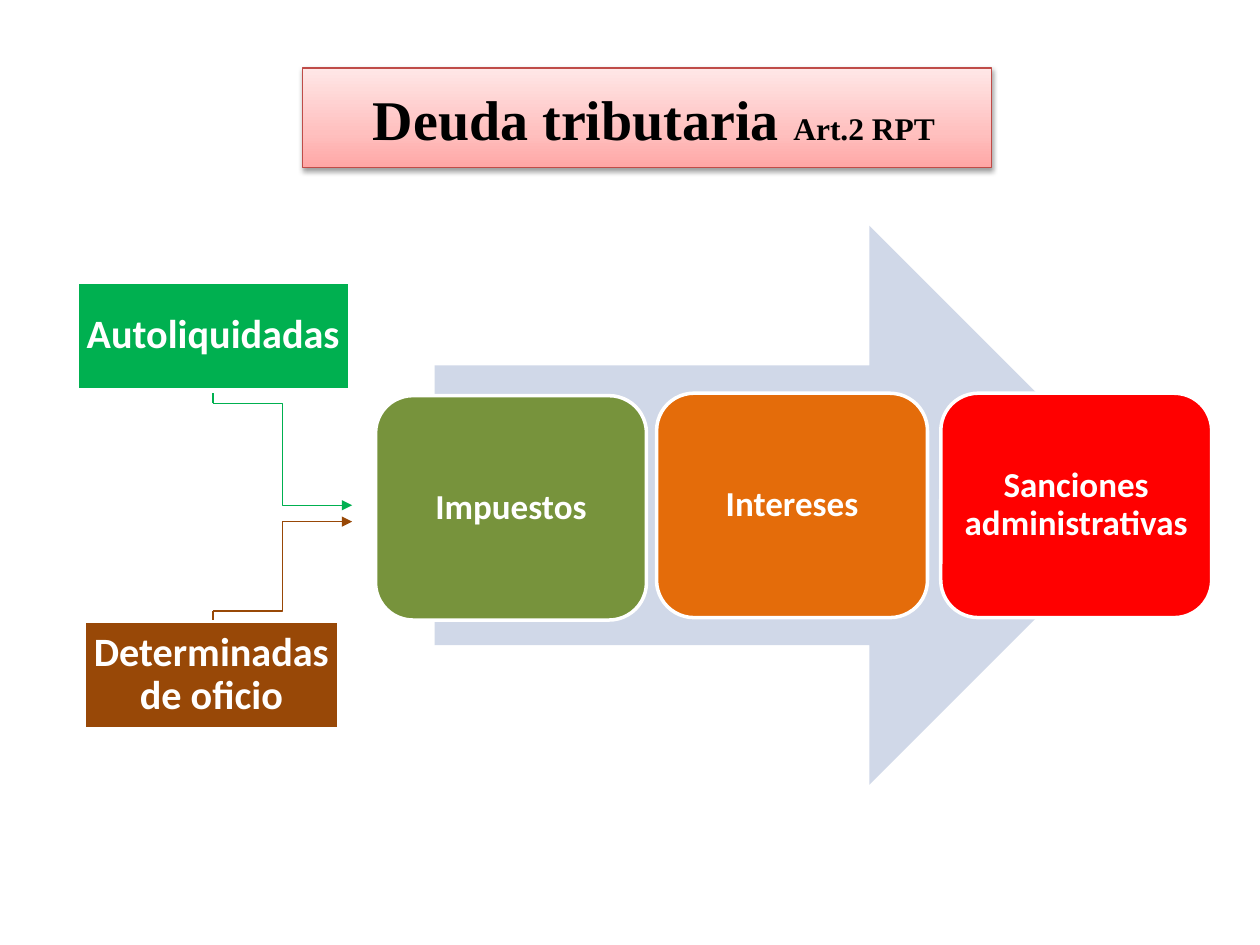
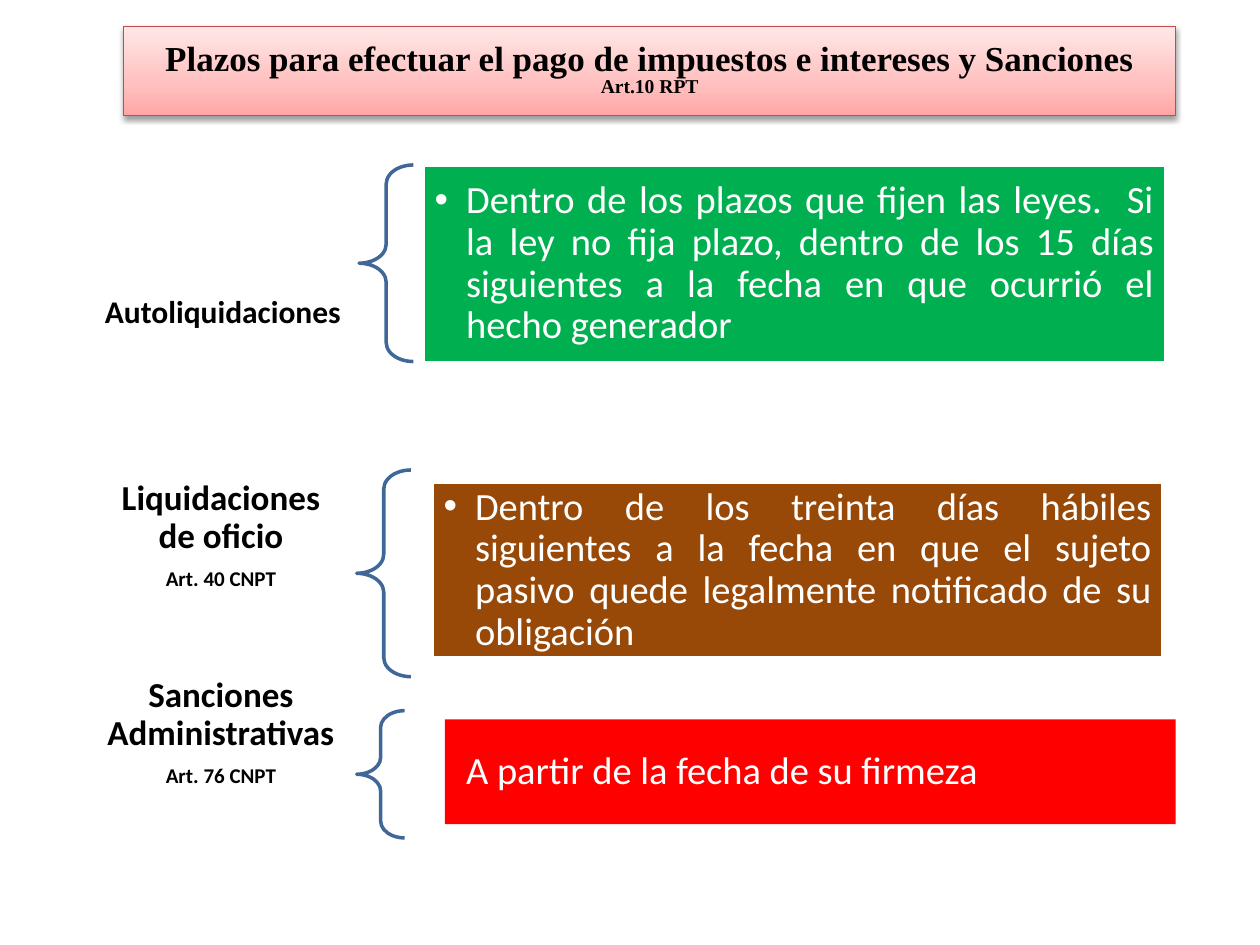
from collections import namedtuple
from dataclasses import dataclass

import lxml.etree
import pptx
import pptx.dml.color
import pptx.enum.dml
import pptx.enum.shapes
import pptx.enum.text
import pptx.oxml.ns
import pptx.util

Pt = pptx.util.Pt
qn = pptx.oxml.ns.qn
Preset = pptx.enum.shapes.MSO_SHAPE
Connector = pptx.enum.shapes.MSO_CONNECTOR
Align = pptx.enum.text.PP_ALIGN

Box = namedtuple("Box", "left top width height")


@dataclass(frozen=True)
class Theme:
    title_font: str = "Times New Roman"
    body_font: str = "Calibri"
    white: str = "FFFFFF"
    black: str = "000000"
    green: str = "00B050"
    brown: str = "984807"
    red: str = "FF0000"
    olive: str = "77933C"
    orange: str = "E46C0A"
    pale_blue: str = "D0D8E8"
    brace: str = "3F6797"
    title_line: str = "BF4C48"
    title_stops: tuple = ((0, "FFA6A5"), (35, "FFC0BF"), (100, "FFE7E7"))
    title_size: float = 32
    title_note_size: float = 18
    long_title_size: float = 20
    long_title_note_size: float = 11.2
    source_size: float = 23
    panel_size: float = 22
    label_size: float = 20
    small_label_size: float = 18
    note_size: float = 12
    outline: float = 2
    hairline: float = 0.75
    line_spacing: float = 0.9


THEME = Theme()


def rgb(color):
    return pptx.dml.color.RGBColor.from_string(color)


def inside(box, left, top, width, height):
    """Turn offsets within a box into a box on the page."""
    return Box(box.left + left, box.top + top, width, height)


def add_node(parent, tag, **attributes):
    values = {name: str(value) for name, value in attributes.items()}
    return lxml.etree.SubElement(parent, qn(tag), values)


def add_preset(page, preset, box, fill=None, line=None, weight=THEME.outline):
    shape = page.shapes.add_shape(preset, *(Pt(length) for length in box))
    shape.shadow.inherit = False
    if fill:
        shape.fill.solid()
        shape.fill.fore_color.rgb = rgb(fill)
    else:
        shape.fill.background()
    if line:
        shape.line.color.rgb = rgb(line)
        shape.line.width = Pt(weight)
    else:
        shape.line.fill.background()
    return shape


def style_run(span, size, color, bold=True, font=THEME.body_font):
    span.font.name = font
    span.font.size = Pt(size)
    span.font.bold = bold
    span.font.color.rgb = rgb(color)


def set_margins(frame, side, end):
    frame.word_wrap = True
    frame.vertical_anchor = pptx.enum.text.MSO_ANCHOR.MIDDLE
    frame.margin_left = frame.margin_right = Pt(side)
    frame.margin_top = frame.margin_bottom = Pt(end)


def write(shape, lines, color, margins, align=Align.CENTER, bold=True):
    """Fill a shape with (text, size) lines in the body font."""
    frame = shape.text_frame
    set_margins(frame, *margins)
    frame.text = "\n".join(text for text, _ in lines)
    for para, (_, size) in zip(frame.paragraphs, lines):
        para.alignment = align
        para.line_spacing = THEME.line_spacing
        para.space_after = Pt(round(size * 0.35))
        style_run(para.runs[0], size, color, bold)


def add_bullet(para, indent):
    properties = para._p.get_or_add_pPr()
    properties.set("marL", str(Pt(indent)))
    properties.set("indent", str(-Pt(indent)))
    add_node(properties, "a:buFont", typeface="Arial")
    add_node(properties, "a:buChar", char="•")


def add_line(page, kind, start, end, color, arrow=False):
    line = page.shapes.add_connector(kind, *(Pt(value) for value in start + end))
    line.line.color.rgb = rgb(color)
    line.line.width = Pt(THEME.hairline)
    if arrow:
        add_node(line.line._get_or_add_ln(), "a:tailEnd", type="triangle")
    add_node(line._element.spPr, "a:effectLst")


def title_band(page, box):
    """Pink gradient band with a soft shadow; returns its text frame."""
    band = add_preset(page, Preset.RECTANGLE, box, THEME.white,
                      THEME.title_line, THEME.hairline)
    # Three-stop gradient that rises from the lower edge
    band.fill.gradient()
    band.fill.gradient_angle = 90
    stops = band._element.spPr.find(qn("a:gradFill")).find(qn("a:gsLst"))
    for stop in list(stops):
        stops.remove(stop)
    for position, color in THEME.title_stops:
        stop = add_node(stops, "a:gs", pos=position * 1000)
        add_node(stop, "a:srgbClr", val=color)
    # Soft shadow below
    effects = band._element.spPr.find(qn("a:effectLst"))
    shadow = add_node(effects, "a:outerShdw", blurRad=Pt(3.1), dist=Pt(1.6),
                      dir=5400000, rotWithShape=0)
    shadow_color = add_node(shadow, "a:srgbClr", val=THEME.black)
    add_node(shadow_color, "a:alpha", val=38000)
    set_margins(band.text_frame, 7.2, 3.6)
    return band.text_frame


def write_title(para, parts):
    para.alignment = Align.CENTER
    for text, size in parts:
        span = para.add_run()
        span.text = text
        style_run(span, size, THEME.black, font=THEME.title_font)


def debt_arrow(page, box):
    """Wide arrow behind the three components of the debt."""
    add_preset(page, Preset.RIGHT_ARROW, inside(box, 33.8, 0, 408.2, box.height),
               THEME.pale_blue)
    components = (
        ("Impuestos", THEME.olive, 0, 97.2),
        ("Intereses", THEME.orange, 160.6, 95.8),
        ("Sanciones administrativas", THEME.red, 323, 95.8),
    )
    for name, color, left, top in components:
        card = add_preset(page, Preset.ROUNDED_RECTANGLE,
                          inside(box, left, top, 154.8, 128.2), color, THEME.white)
        write(card, [(name, THEME.label_size)], THEME.white, (5.8, 5.8))


def tax_sources(page, box):
    """Two kinds of tax, each joined by an elbow arrow to the first component."""
    stem_x = box.left + 77.8
    sources = (
        ("Autoliquidadas", THEME.green, 0, 0, 156.2, 63.4, 69.1, 127.4),
        ("Determinadas de oficio", THEME.brown, 4.3, 193.7, 145.4, 193, 187.9, 136.8),
    )
    for name, color, left, top, width, edge, bend, tip in sources:
        card = add_preset(page, Preset.RECTANGLE, inside(box, left, top, width, 61.2),
                          color, THEME.white)
        write(card, [(name, THEME.source_size)], THEME.white, (4.3, 4.3))
        corner = (stem_x, box.top + bend)
        add_line(page, Connector.ELBOW, corner,
                 (box.left + box.width, box.top + tip), color, arrow=True)
        add_line(page, Connector.STRAIGHT, corner, (stem_x, box.top + edge), color)


def term_label(page, box, lines, align):
    label = page.shapes.add_textbox(*(Pt(length) for length in box))
    write(label, lines, THEME.black, (9.5, 4), align)


def term_brace(page, box):
    brace = add_preset(page, Preset.LEFT_BRACE, box, line=THEME.brace)
    brace.adjustments[0] = 0.35
    brace.adjustments[1] = 0.5


def term_panel(page, box, text, color, bullet):
    panel = add_preset(page, Preset.RECTANGLE, box, color,
                       THEME.white if bullet else None)
    write(panel, [(text, THEME.panel_size)], THEME.white,
          (6.5, 6.5) if bullet else (12.2, 4.3), Align.JUSTIFY, bold=False)
    if bullet:
        add_bullet(panel.text_frame.paragraphs[0], 18)


def term_row(page, box, lines, align, brace, panel, text, color, bullet=True):
    """One payment term: label, brace and coloured panel."""
    term_label(page, Box(box.left, box.top, 156.2, box.height), lines, align)
    term_brace(page, inside(box, *brace))
    term_panel(page, inside(box, *panel), text, color, bullet)


def debt_slide(page):
    frame = title_band(page, Box(172.8, 38.9, 393.8, 56.9))
    write_title(frame.paragraphs[0], [(" Deuda tributaria ", THEME.title_size),
                                      ("Art.2 RPT", THEME.title_note_size)])
    debt_arrow(page, Box(214.6, 128.9, 477.8, 319.7))
    tax_sources(page, Box(43.9, 161.3, 157.4, 254.9))


def terms_slide(page):
    frame = title_band(page, Box(70.6, 15.1, 601.2, 51.1))
    write_title(frame.paragraphs[0],
                [(" Plazos para efectuar el pago de impuestos e intereses y Sanciones ",
                  THEME.long_title_size)])
    write_title(frame.add_paragraph(), [("Art.10 RPT", THEME.long_title_note_size)])
    for para in frame.paragraphs:
        para.line_spacing = 0.8

    term_row(page, Box(48.2, 94.3, 617.8, 169.9),
             [("Autoliquidaciones", THEME.small_label_size)], Align.RIGHT,
             (157, 0, 31, 112.3), (193.7, 0, 424.1, 113),
             "Dentro de los plazos que fijen las leyes.  Si la ley no fija plazo, "
             "dentro de los 15 días siguientes a la fecha en que ocurrió el hecho "
             "generador", THEME.green)
    term_row(page, Box(48.2, 268.6, 616.4, 74.9),
             [("Liquidaciones de oficio", THEME.label_size),
              ("Art. 40 CNPT", THEME.note_size)], Align.CENTER,
             (155.6, 0, 31, 118.1), (198.8, 7.2, 417.6, 100.1),
             "Dentro de los treinta días hábiles siguientes a la fecha en que el "
             "sujeto pasivo quede legalmente notificado de su obligación", THEME.brown)
    term_row(page, Box(48.2, 392.4, 623.6, 52.6),
             [("Sanciones Administrativas", THEME.label_size),
              ("Art. 76 CNPT", THEME.note_size)], Align.CENTER,
             (155.6, 13.7, 27.4, 72.7), (206, 18.7, 417.6, 59.8),
             "A partir de la fecha de su firmeza", THEME.red, bullet=False)


def main():
    deck = pptx.Presentation()
    deck.slide_width, deck.slide_height = Pt(720), Pt(540)
    blank = deck.slide_layouts[6]
    for build in (debt_slide, terms_slide):
        build(deck.slides.add_slide(blank))
    deck.save("out.pptx")


if __name__ == "__main__":
    main()
